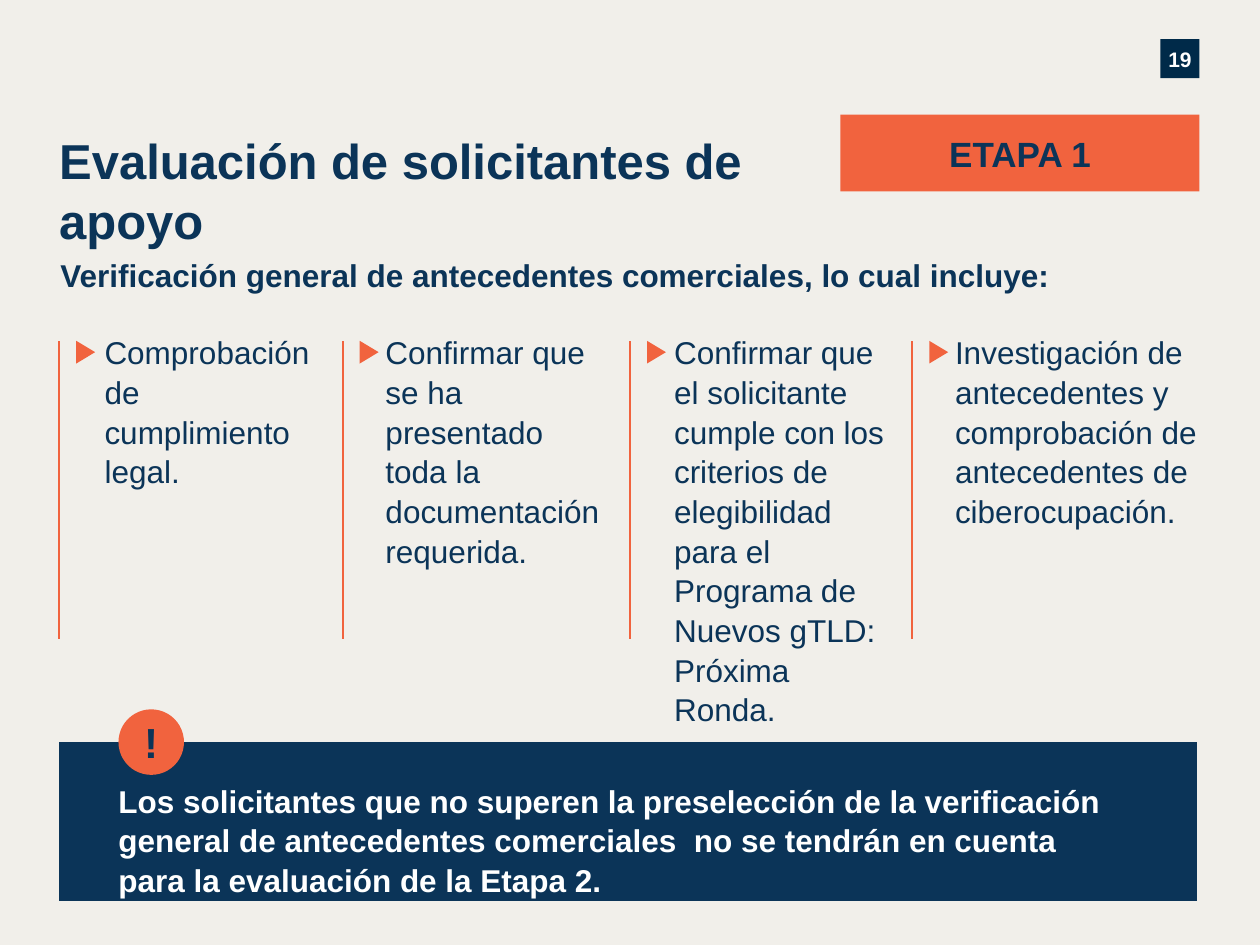
import pptx
import pptx.util
import pptx.dml.color
import pptx.enum.shapes
import pptx.enum.text
import pptx.oxml.ns
import lxml.etree

COLORS = {"paper": "F1EFEA", "navy": "0B3458", "dark": "002A49",
          "coral": "F1633E", "white": "FFFFFF"}
FONT = "Arial"
KIND = pptx.enum.shapes.MSO_SHAPE
ALIGN = pptx.enum.text.PP_ALIGN
ANCHOR = pptx.enum.text.MSO_ANCHOR

deck = pptx.Presentation()
deck.slide_width = pptx.util.Inches(10)
deck.slide_height = pptx.util.Inches(7.5)
CELL = deck.slide_width / 100  # square grid: 100 columns by 75 rows


def cells(*nums):
    return [pptx.util.Emu(round(num * CELL)) for num in nums]


def tint(name):
    return pptx.dml.color.RGBColor.from_string(COLORS[name])


def write(shape, text, size, color="navy", bold=True, align=ALIGN.LEFT,
          anchor=ANCHOR.TOP, pads=(0, 0, 0, 0), lead=None):
    frame = shape.text_frame
    frame.word_wrap = True
    frame.vertical_anchor = anchor
    (frame.margin_left, frame.margin_top,
     frame.margin_right, frame.margin_bottom) = cells(*pads)
    par = frame.paragraphs[0]
    par.alignment = align
    if lead:
        par.line_spacing = lead
    run = par.add_run()
    run.text = text
    run.font.name = FONT
    run.font.size = pptx.util.Pt(size)
    run.font.bold = bold
    run.font.color.rgb = tint(color)


def label(slide, box, text, size, **style):
    write(slide.shapes.add_textbox(*cells(*box)), text, size, **style)


def block(slide, kind, box, color):
    shape = slide.shapes.add_shape(kind, *cells(*box))
    shape.shadow.inherit = False
    shape.fill.solid()
    shape.fill.fore_color.rgb = tint(color)
    shape.line.fill.background()
    return shape


def badge(slide, kind, box, fill, text, size, **style):
    write(block(slide, kind, box, fill), text, size,
          align=ALIGN.CENTER, anchor=ANCHOR.MIDDLE, **style)


def header(slide, box):
    x, y, w, h = box
    # Page number and stage tag share the right edge
    badge(slide, KIND.RECTANGLE, (x + w - 3.1, y, 3.1, 3.1), "dark", "19", 12,
          color="white", lead=1.08)
    badge(slide, KIND.RECTANGLE, (x + w - 28.5, y + 6, 28.5, 6.1), "coral",
          "ETAPA 1", 20)
    # Title and lead-in
    label(slide, (x, y + 6.7, 58.8, 5.5),
          "Evaluación de solicitantes de apoyo", 28,
          pads=(0, 0.4, 0, 0), lead=1.03)
    label(slide, (x + 0.1, y + h - 4.1, 82.5, 4.1),
          "Verificación general de antecedentes comerciales, lo cual incluye:",
          18)


def column(slide, box, text, wide):
    x, y, w, h = box
    # Rule on the left edge
    left, top, foot = cells(x, y, y + h)
    rule = slide.shapes.add_connector(
        pptx.enum.shapes.MSO_CONNECTOR.STRAIGHT, left, top, left, foot)
    rule.line.color.rgb = tint("coral")
    rule.line.width = pptx.util.Pt(1.25)
    lxml.etree.SubElement(rule._element.spPr, pptx.oxml.ns.qn("a:effectLst"))
    # Marker and text
    mark = block(slide, KIND.ISOSCELES_TRIANGLE, (x + 1.2, y + 0.1, 1.8, 1.5),
                 "coral")
    mark.rotation = 90
    label(slide, (x + w - wide, y - 0.8, wide, h), text, 18,
          bold=False, lead=1.05)


def checks(slide, box):
    x, y, w, h = box
    # Start, column width and text width of each check
    items = [
        (0, 20.6, 17, "Comprobación de cumplimiento legal."),
        (22.5, 21, 17.6, "Confirmar que se ha presentado toda la "
                         "documentación requerida."),
        (45.3, 21.1, 17.6, "Confirmar que el solicitante cumple con los "
                           "criterios de elegibilidad para el Programa de "
                           "Nuevos gTLD: Próxima Ronda."),
        (67.7, 22.7, 19.3, "Investigación de antecedentes y comprobación de "
                           "antecedentes de ciberocupación."),
    ]
    for start, span, wide, text in items:
        column(slide, (x + start, y, span, h), text, wide)


def notice(slide, box):
    x, y, w, h = box
    write(block(slide, KIND.RECTANGLE, box, "navy"),
          "Los solicitantes que no superen la preselección de la verificación "
          "general de antecedentes comerciales  no se tendrán en cuenta para "
          "la evaluación de la Etapa 2.", 18, color="white",
          pads=(4.7, 3, 6.7, 3), lead=1.05)
    # Alert disc centred on the top edge
    disc = 5.2
    badge(slide, KIND.OVAL, (x + 4.7, y - disc / 2, disc, disc), "coral",
          "!", 24, pads=(1, 0.5, 1, 0.5))


def main():
    slide = deck.slides.add_slide(deck.slide_layouts[6])
    slide.background.fill.solid()
    slide.background.fill.fore_color.rgb = tint("paper")
    header(slide, (4.7, 3.1, 90.5, 21.3))
    checks(slide, (4.7, 27.1, 90.5, 23.6))
    notice(slide, (4.7, 58.9, 90.3, 12.6))
    deck.save("out.pptx")


if __name__ == "__main__":
    main()
